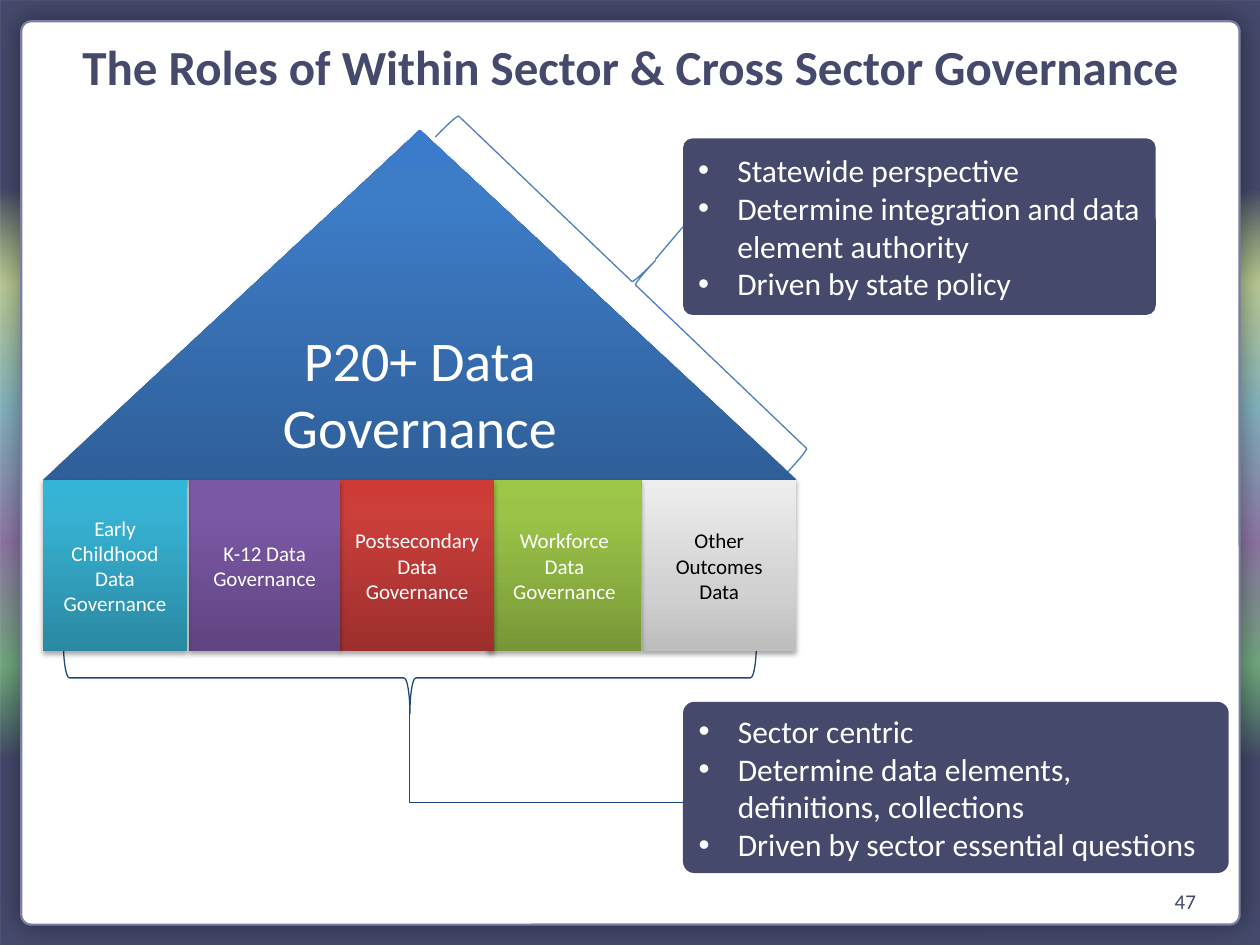
from dataclasses import dataclass

from lxml import etree
from pptx import Presentation
from pptx import util as u
from pptx.dml.color import RGBColor
from pptx.enum import shapes, text
from pptx.oxml.ns import qn

KIND = shapes.MSO_SHAPE
ALIGN = text.PP_ALIGN
ANCHOR = text.MSO_ANCHOR


@dataclass(frozen=True)
class Theme:
    font: str = "Calibri"
    ink: str = "45496B"
    white: str = "FFFFFF"
    black: str = "000000"
    frame: str = "7980A3"
    sector_line: str = "1F497D"
    state_line: str = "4B7EBC"
    title_size: int = 28
    roof_size: int = 32
    note_size: int = 18
    small_size: int = 12
    hairline: float = 0.75


THEME = Theme()
TITLE = "The Roles of Within Sector & Cross Sector Governance"
PAGE_NUMBER = "47"
BACKDROP = [(20, THEME.ink), (30, "839F3F", 55), (43, "328196", 60),
            (57, "542E75", 65), (70, "37864A", 70), (80, THEME.ink)]
ROOF = ["P20+ Data Governance"]
ROOF_COLORS = ("2F5F99", "3D7CC7", "3A7CCB")
SECTORS = [
    (["Early Childhood", "Data Governance"], 0.86, 2.92, ("2A88A2", "37B1D2", "34B4D6"), THEME.white),
    (["K-12 Data Governance"], 3.81, 3.05, ("5F4480", "7B58A6", "7C57A8"), THEME.white),
    (["Postsecondary", "Data Governance"], 6.86, 3.1, ("9C2F2D", "CB3E3A", "CE3B37"), THEME.white),
    (["Workforce", "Data Governance"], 9.83, 3.1, ("779737", "9BC348", "9DC746"), THEME.white),
    (["Other Outcomes Data"], 12.95, 3.1, ("BDBDBD", "D1D1D1", "EEEEEE"), THEME.black),
]
STATE_NOTES = ["Statewide perspective", "Determine integration and data element authority",
               "Driven by state policy"]
SECTOR_NOTES = ["Sector centric", "Determine data elements, definitions, collections",
                "Driven by sector essential questions"]
HOUSE_LEFT, HOUSE_WIDTH = 0.86, 15.21
ROOF_TOP, WALL_TOP, WALL_HEIGHT = 2.62, 9.68, 3.45
NOTE_LEFT = 13.77


def rgb(color):
    return RGBColor.from_string(color)


def add_color(parent, color, alpha=100):
    node = etree.SubElement(parent, qn("a:srgbClr"), val=color)
    if alpha < 100:
        etree.SubElement(node, qn("a:alpha"), val=str(alpha * 1000))


def add_text(box, lines, size, color, bold=False, align=ALIGN.CENTER, anchor=ANCHOR.MIDDLE, bullet=False):
    frame = box.text_frame
    frame.word_wrap = True
    frame.vertical_anchor = anchor
    for index, line in enumerate(lines):
        para = frame.add_paragraph() if index else frame.paragraphs[0]
        para.alignment = align
        span = para.add_run()
        span.text = line
        span.font.name, span.font.size, span.font.bold = THEME.font, u.Pt(size), bold
        span.font.color.rgb = rgb(color)
        if bullet:
            props = para._p.get_or_add_pPr()
            indent = u.Cm(0.79)
            props.set("marL", str(indent))
            props.set("indent", str(-indent))
            etree.SubElement(props, qn("a:buFont"), typeface="Arial")
            etree.SubElement(props, qn("a:buChar"), char="•")


def add_box(page, kind, place, fill=None, line=None, width=THEME.hairline, adjust=(), turn=0):
    box = page.shapes.add_shape(kind, *map(u.Cm, place))
    box.shadow.inherit = False
    box.rotation = turn
    for index, value in enumerate(adjust):
        box.adjustments[index] = value
    if fill:
        box.fill.solid()
        box.fill.fore_color.rgb = rgb(fill)
    else:
        box.fill.background()
    if line:
        box.line.color.rgb = rgb(line)
        box.line.width = u.Pt(width)
    else:
        box.line.fill.background()
    return box


def set_gradient(box, stops, angle):
    box.fill.gradient()
    box.fill.gradient_angle = angle
    stop_list = box._element.spPr.find(qn("a:gradFill")).find(qn("a:gsLst"))
    for old in list(stop_list):
        stop_list.remove(old)
    for position, *color in stops:
        add_color(etree.SubElement(stop_list, qn("a:gs"), pos=str(position * 1000)), *color)


def set_shadow(box, alpha, blur, distance, angle):
    effects = box._element.spPr.find(qn("a:effectLst"))
    shadow = etree.SubElement(effects, qn("a:outerShdw"), blurRad=str(u.Pt(blur)), dist=str(u.Pt(distance)),
                              dir=str(angle * 60000), rotWithShape="0")
    add_color(shadow, THEME.black, alpha)


def add_house_part(page, kind, place, colors, lines, size, color, middle=80):
    box = add_box(page, kind, place)
    set_gradient(box, list(zip((0, middle, 100), colors)), 90)
    set_shadow(box, 35, 3.1, 1.8, 90)
    add_text(box, lines, size, color)


def add_line(page, kind, begin, end, color):
    line = page.shapes.add_connector(kind, *map(u.Cm, begin + end))
    line.line.color.rgb = rgb(color)
    line.line.width = u.Pt(THEME.hairline)
    etree.SubElement(line._element.spPr, qn("a:effectLst"))
    return line


def add_note(page, top, width, height, corner, lines):
    box = add_box(page, KIND.ROUNDED_RECTANGLE, (NOTE_LEFT, top, width, height), THEME.ink, adjust=[corner])
    add_text(box, lines, THEME.note_size, THEME.white, align=ALIGN.LEFT, bullet=True)
    return box


def add_label(page, place, label, size, **options):
    box = page.shapes.add_textbox(*map(u.Cm, place))
    add_text(box, [label], size, THEME.ink, **options)


def main():
    """Build the governance house slide."""
    deck = Presentation()
    deck.slide_width, deck.slide_height = u.Cm(25.4), u.Cm(19.05)
    page = deck.slides.add_slide(deck.slide_layouts[6])

    backdrop = add_box(page, KIND.RECTANGLE, (0, 0, 25.4, 19.1))
    set_gradient(backdrop, BACKDROP, 270)
    card = add_box(page, KIND.ROUNDED_RECTANGLE, (0.43, 0.43, 24.56, 18.21), THEME.white,
                   THEME.frame, 1.25, [0.011])
    set_shadow(card, 40, 15, 0, 0)
    add_label(page, (18.44, 17.65, 5.92, 1.02), PAGE_NUMBER, THEME.small_size, align=ALIGN.RIGHT)

    state_box = add_note(page, 2.79, 9.53, 3.56, 0.054, STATE_NOTES)
    add_note(page, 14.15, 11, 3.45, 0.066, SECTOR_NOTES)

    add_box(page, KIND.LEFT_BRACE, (7.54, 6.68, 1.45, 13.97), line=THEME.sector_line, turn=270)
    elbow = add_line(page, shapes.MSO_CONNECTOR.ELBOW, (NOTE_LEFT, 16.18), (8.26, 14.4), THEME.sector_line)
    elbow._element.spPr.find(qn("a:prstGeom")).set("prst", "bentConnector2")
    add_box(page, KIND.RIGHT_BRACE, (12.12, 0.79, 1.27, 9.8), line=THEME.state_line,
            adjust=[0.04, 0.503], turn=313.7)
    link = add_line(page, shapes.MSO_CONNECTOR.STRAIGHT, (13.21, 5.23), (NOTE_LEFT, 4.57), THEME.state_line)
    link.end_connect(state_box, 1)

    add_house_part(page, KIND.ISOSCELES_TRIANGLE, (HOUSE_LEFT, ROOF_TOP, HOUSE_WIDTH, WALL_TOP - ROOF_TOP),
                   ROOF_COLORS, ROOF, THEME.roof_size, THEME.white)
    for lines, left, width, colors, color in reversed(SECTORS):
        add_house_part(page, KIND.RECTANGLE, (left, WALL_TOP, width, WALL_HEIGHT), colors, lines,
                       THEME.small_size, color, 35 if color == THEME.black else 80)
    add_label(page, (0.64, 0.61, 24.13, 1.45), TITLE, THEME.title_size, bold=True, anchor=ANCHOR.TOP)
    deck.save("out.pptx")


if __name__ == "__main__":
    main()
